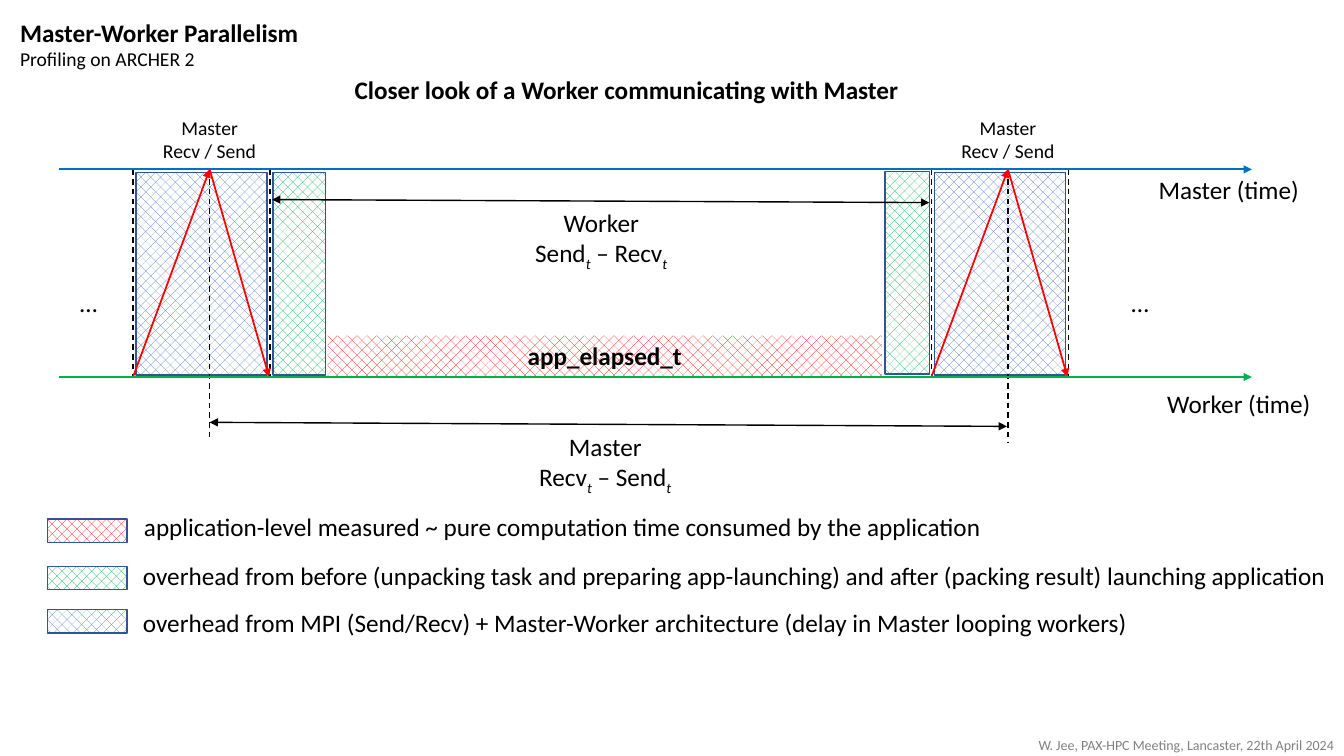
from dataclasses import dataclass
from typing import NamedTuple

from lxml.etree import SubElement
from pptx import Presentation
from pptx.dml.color import RGBColor
from pptx.enum.dml import MSO_LINE, MSO_PATTERN
from pptx.enum.shapes import MSO_CONNECTOR, MSO_SHAPE
from pptx.enum.text import MSO_ANCHOR, PP_ALIGN as AL
from pptx.oxml.ns import qn
from pptx.util import Pt

COLORS = {
    "black": "000000", "white": "FFFFFF", "grey": "808080",
    "master": "0070C0", "worker": "00B050", "message": "FF0000",
    "app": "FF0000", "launch": "00B050", "mpi": "4472C4", "edge": "325491",
}
FONT = "Calibri"
MASTER_Y, WORKER_Y = 120.96, 269.28
AXIS_LEFT, AXIS_RIGHT = 42.48, 894.24
NEXT_EXCHANGE = 570.24


class Box(NamedTuple):
    x: float
    y: float
    w: float
    h: float


@dataclass
class Label:
    box: Box
    lines: list[str]
    size: float = 18
    bold: bool = False
    color: str = "black"
    align: AL = AL.CENTER
    spacing: float = 1.0


@dataclass
class Block:
    box: Box
    color: str
    outlined: bool = True


@dataclass
class Stroke:
    x1: float
    y1: float
    x2: float
    y2: float
    color: str = "black"
    width: float = 1
    dashed: bool = False
    start_arrow: bool = False
    end_arrow: bool = True


@dataclass
class Legend:
    color: str
    swatch_y: float
    text_x: float
    text_y: float
    text: str


def rgb(name: str) -> RGBColor:
    return RGBColor.from_string(COLORS[name])


def points(box: Box) -> list[Pt]:
    return [Pt(v) for v in box]


def style_paragraph(p, label: Label) -> None:
    p.alignment = label.align
    p.line_spacing = label.spacing
    for r in p.runs:
        r.font.name = FONT
        r.font.size = Pt(label.size)
        r.font.bold = label.bold
        r.font.color.rgb = rgb(label.color)


def add_label(s, label: Label):
    sp = s.shapes.add_textbox(*points(label.box))
    tf = sp.text_frame
    tf.word_wrap = True
    tf.text = "\n".join(label.lines)
    for p in tf.paragraphs:
        style_paragraph(p, label)
    return sp


def add_difference(s, x: float, y: float, who: str, first: str, second: str) -> None:
    label = Label(Box(x, y, 209.52, 51.12), [who, first])
    p = add_label(s, label).text_frame.paragraphs[1]
    for text in ("t", f" – {second}", "t"):
        r = p.add_run()
        r.text = text
        if text == "t":
            r.font.italic = True
            r._r.get_or_add_rPr().set("baseline", "-25000")
    style_paragraph(p, label)


def add_block(s, block: Block):
    sp = s.shapes.add_shape(MSO_SHAPE.RECTANGLE, *points(block.box))
    sp.shadow.inherit = False
    sp.fill.patterned()
    sp.fill.pattern = MSO_PATTERN.PERCENT_30
    sp.fill.fore_color.rgb = rgb(block.color)
    sp.fill.back_color.rgb = rgb("white")
    if block.outlined:
        sp.line.color.rgb = rgb("edge")
        sp.line.width = Pt(1)
    else:
        sp.line.fill.background()
    return sp


def add_stroke(s, k: Stroke) -> None:
    cx = s.shapes.add_connector(
        MSO_CONNECTOR.STRAIGHT, Pt(k.x1), Pt(k.y1), Pt(k.x2), Pt(k.y2))
    cx.line.color.rgb = rgb(k.color)
    cx.line.width = Pt(k.width)
    if k.dashed:
        cx.line.dash_style = MSO_LINE.DASH
    ln = cx.line._get_or_add_ln()
    for tag, wanted in (("a:headEnd", k.start_arrow), ("a:tailEnd", k.end_arrow)):
        if wanted:
            SubElement(ln, qn(tag), type="triangle")
    SubElement(cx._element.spPr, qn("a:effectLst"))


def add_exchange(s, dx: float, drop_y: float) -> None:
    start, peak, end = 95.04 + dx, 149.76 + dx, 192.24 + dx
    add_block(s, Block(Box(97.2 + dx, 123.12, 93.6, 144.72), "mpi"))
    for x, bottom in ((start, WORKER_Y), (peak, drop_y), (end + 0.72, WORKER_Y)):
        add_stroke(s, Stroke(x, MASTER_Y, x, bottom, dashed=True, end_arrow=False))
    add_stroke(s, Stroke(start, WORKER_Y, peak, MASTER_Y, "message", 1.25))
    add_stroke(s, Stroke(peak, MASTER_Y, end, WORKER_Y, "message", 1.25))
    add_label(s, Label(Box(79.2 + dx, 79.2, 141.12, 41.04),
                       ["Master", "Recv / Send"], 14))


def add_legend(s, item: Legend) -> None:
    add_block(s, Block(Box(33.84, item.swatch_y, 56.88, 16.56), item.color))
    add_label(s, Label(Box(item.text_x, item.text_y, 864, 28.8), [item.text],
                       align=AL.LEFT))


LABELS = [
    Label(Box(246.24, 49.68, 419.76, 28.8),
          ["Closer look of a Worker communicating with Master"],
          bold=True, align=AL.LEFT),
    Label(Box(807.12, 120.96, 141.12, 28.8), ["Master (time)"]),
    Label(Box(814.32, 273.6, 141.12, 28.8), ["Worker (time)"]),
    Label(Box(13.36, 201.6, 100, 28.8), ["…"]),
    Label(Box(764.32, 201.6, 100, 28.8), ["…"]),
    Label(Box(598.32, 516.24, 361.44, 23.76),
          ["W. Jee, PAX-HPC Meeting, Lancaster, 22th April 2024"],
          10, color="grey", align=AL.RIGHT, spacing=1.5),
]
LAUNCH_BLOCKS = [
    Block(Box(195.12, 123.12, 37.44, 144.72), "launch"),
    Block(Box(632.16, 122.4, 31.68, 144.72), "launch"),
]
STROKES = [
    Stroke(AXIS_LEFT, MASTER_Y, AXIS_RIGHT, MASTER_Y, "master", 1.25),
    Stroke(AXIS_LEFT, WORKER_Y, AXIS_RIGHT, WORKER_Y, "worker", 1.25),
    Stroke(194.4, 142.56, 663.84, 144.72, start_arrow=True),
    Stroke(149.76, 301.68, 719.28, 304.56, start_arrow=True),
]
LEGENDS = [
    Legend("app", 370.8, 95.76, 361.44,
           "application-level measured ~ pure computation time consumed "
           "by the application"),
    Legend("launch", 404.64, 95.04, 396.72,
           "overhead from before (unpacking task and preparing app-launching) "
           "and after (packing result) launching application"),
    Legend("mpi", 435.6, 95.04, 430.56,
           "overhead from MPI (Send/Recv) + Master-Worker architecture "
           "(delay in Master looping workers)"),
]


def main() -> None:
    prs = Presentation()
    prs.slide_width, prs.slide_height = Pt(960), Pt(540)
    s = prs.slides.add_slide(prs.slide_layouts[6])

    title = Label(Box(7.2, 8.64, 215.28, 46.08),
                  ["Master-Worker Parallelism", "Profiling on ARCHER 2"],
                  bold=True, align=AL.LEFT)
    tf = add_label(s, title).text_frame
    tf.word_wrap = False
    r = tf.paragraphs[1].runs[0]
    r.font.size, r.font.bold = Pt(14), False

    app = Label(Box(234, 239.76, 396, 28.8), ["app_elapsed_t"], bold=True)
    tf = add_block(s, Block(app.box, "app", outlined=False)).text_frame
    tf.vertical_anchor = MSO_ANCHOR.MIDDLE
    tf.text = app.lines[0]
    style_paragraph(tf.paragraphs[0], app)

    for block in LAUNCH_BLOCKS:
        add_block(s, block)
    for dx, drop_y in ((0, 313.2), (NEXT_EXCHANGE, 316.08)):
        add_exchange(s, dx, drop_y)
    for stroke in STROKES:
        add_stroke(s, stroke)
    for label in LABELS:
        add_label(s, label)
    add_difference(s, 324.72, 144.72, "Worker", "Send", "Recv")
    add_difference(s, 327.6, 304.56, "Master", "Recv", "Send")
    for item in LEGENDS:
        add_legend(s, item)
    prs.save("out.pptx")


if __name__ == "__main__":
    main()
